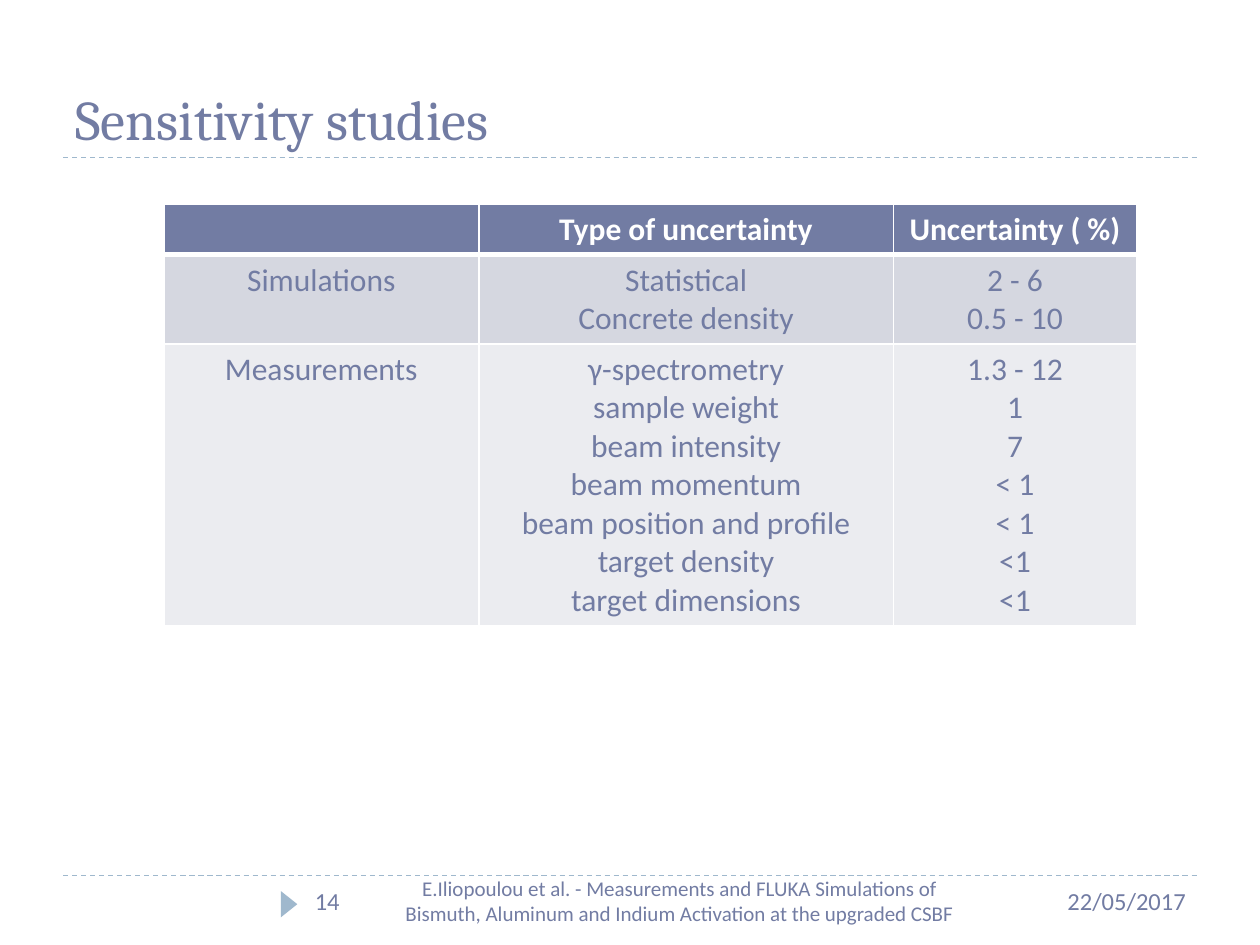
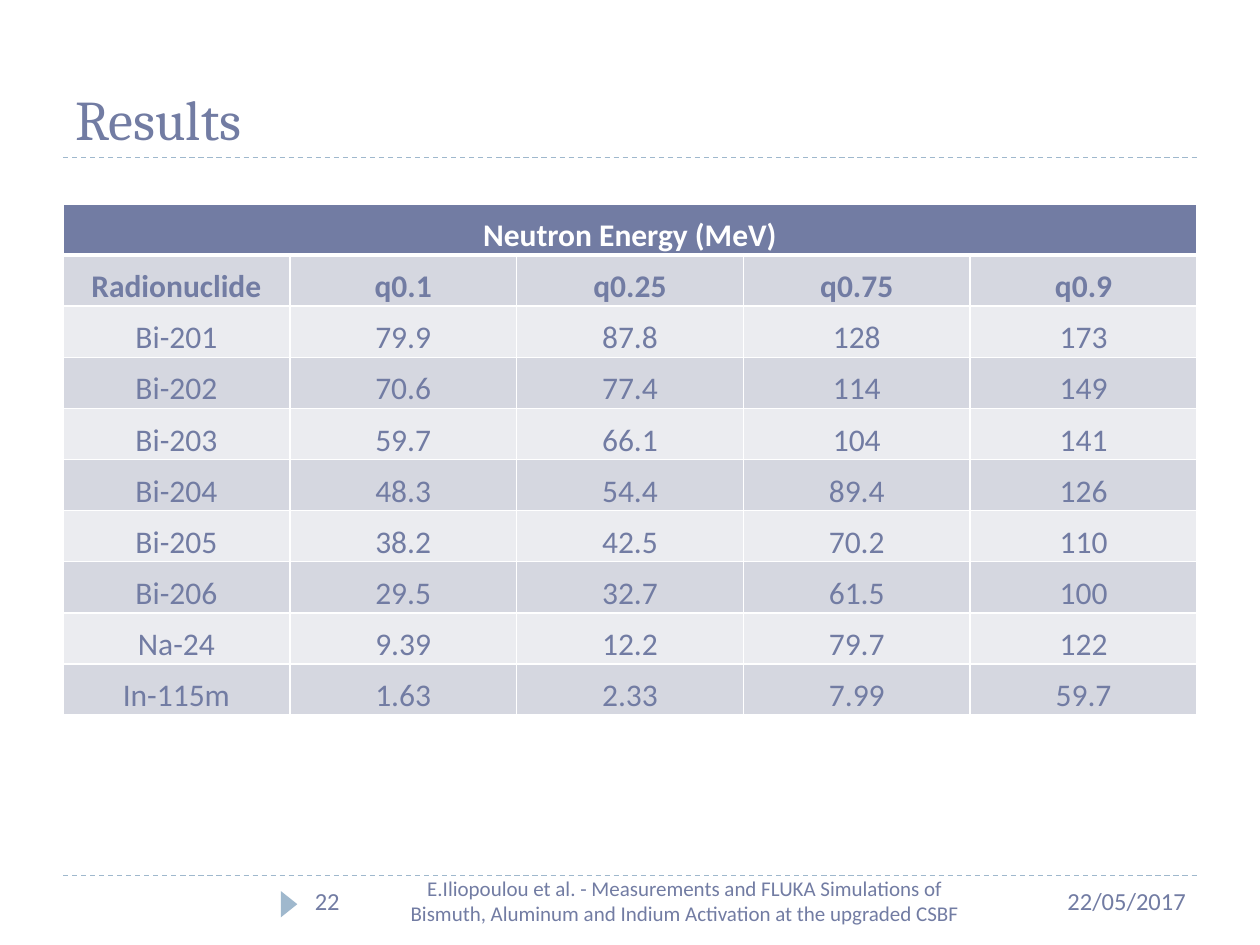
from dataclasses import dataclass

from lxml import etree
from pptx import Presentation
from pptx import util as u
from pptx.dml import color
from pptx.enum import dml, shapes, text
from pptx.oxml import ns

INDIGO, SKY, WHITE = "727CA3", "9FB8CD", "FFFFFF"
BANDS = ("D5D7E0", "EBECF0")
HEADING, BODY = "Cambria", "Calibri"
LEFT, RIGHT, TITLE_RULE, FOOTER_RULE = 36, 684, 90, 500.4
TABLE_TOP = 116.6
DATE = "22/05/2017"
CITATION = (
    "E.Iliopoulou et al. - Measurements and FLUKA Simulations of "
    "Bismuth, Aluminum and Indium Activation at the upgraded CSBF"
)


@dataclass(frozen=True)
class Label:
    """A line of text with its box and style."""
    words: str
    left: float
    top: float
    width: float
    height: float
    size: float
    align: text.PP_ALIGN = text.PP_ALIGN.LEFT
    anchor: text.MSO_ANCHOR = text.MSO_ANCHOR.MIDDLE
    face: str = BODY


@dataclass(frozen=True)
class Grid:
    """A table with its geometry and cell style."""
    rows: tuple[tuple[str, ...], ...]
    left: float
    widths: tuple[float, ...]
    heights: tuple[float, ...]
    anchor: text.MSO_ANCHOR = text.MSO_ANCHOR.TOP
    margins: tuple[float, float, float, float] = (7.2, 3.6, 7.2, 3.6)
    bold_rows: int = 1
    header_spans: bool = False


@dataclass(frozen=True)
class Page:
    """The parts that differ from slide to slide."""
    title: str
    number: int
    citation_width: float
    grid: Grid


UNCERTAINTIES = Grid(
    rows=(
        ("", "Type of uncertainty", "Uncertainty ( %)"),
        ("Simulations", "Statistical\nConcrete density", "2 - 6\n0.5 - 10"),
        (
            "Measurements",
            "γ-spectrometry\nsample weight\nbeam intensity\nbeam momentum\n"
            "beam position and profile\ntarget density\ntarget dimensions",
            "1.3 - 12\n1\n7\n< 1\n< 1\n<1\n<1",
        ),
    ),
    left=93.6,
    widths=(180, 236.9, 139),
    heights=(29, 51, 161),
)

ENERGIES = Grid(
    rows=(
        ("Neutron Energy (MeV)", "", "", "", ""),
        ("Radionuclide", "q0.1", "q0.25", "q0.75", "q0.9"),
        ("Bi-201", "79.9", "87.8", "128", "173"),
        ("Bi-202", "70.6", "77.4", "114", "149"),
        ("Bi-203", "59.7", "66.1", "104", "141"),
        ("Bi-204", "48.3", "54.4", "89.4", "126"),
        ("Bi-205", "38.2", "42.5", "70.2", "110"),
        ("Bi-206", "29.5", "32.7", "61.5", "100"),
        ("Na-24", "9.39", "12.2", "79.7", "122"),
        ("In-115m", "1.63", "2.33", "7.99", "59.7"),
    ),
    left=LEFT,
    widths=((RIGHT - LEFT) / 5,) * 5,
    heights=(29.2,) * 10,
    anchor=text.MSO_ANCHOR.BOTTOM,
    margins=(0.7, 0.7, 0.7, 0),
    bold_rows=2,
    header_spans=True,
)

PAGES = (
    Page("Sensitivity studies", 14, 329, UNCERTAINTIES),
    Page("Results", 22, 334.8, ENERGIES),
)


def rgb(code: str) -> color.RGBColor:
    """Turn a hex string into a colour."""
    return color.RGBColor.from_string(code)


def style_text(frame, size: float, face: str, ink: str, align, bold: bool = False) -> None:
    """Format every paragraph and run of a text frame."""
    for paragraph in frame.paragraphs:
        paragraph.alignment = align
        for run in paragraph.runs:
            run.font.size = u.Pt(size)
            run.font.name = face
            run.font.bold = bold
            run.font.color.rgb = rgb(ink)


def draw_label(slide, label: Label) -> None:
    """Add a label as a wrapped text box."""
    box = slide.shapes.add_textbox(
        u.Pt(label.left), u.Pt(label.top), u.Pt(label.width), u.Pt(label.height)
    )
    frame = box.text_frame
    frame.word_wrap = True
    frame.vertical_anchor = label.anchor
    frame.text = label.words
    style_text(frame, label.size, label.face, INDIGO, label.align)


def draw_rule(slide, height: float) -> None:
    """Add a dashed rule across the slide."""
    rule = slide.shapes.add_connector(
        shapes.MSO_CONNECTOR.STRAIGHT, u.Pt(LEFT), u.Pt(height), u.Pt(RIGHT), u.Pt(height)
    )
    rule.line.color.rgb = rgb(SKY)
    rule.line.width = u.Pt(0.75)
    rule.line.dash_style = dml.MSO_LINE.DASH
    etree.SubElement(rule._element.spPr, ns.qn("a:effectLst"))


def draw_page_marker(slide) -> None:
    """Add the triangle that points at the page number."""
    marker = slide.shapes.add_shape(
        shapes.MSO_SHAPE.ISOSCELES_TRIANGLE, u.Pt(157.7), u.Pt(512), u.Pt(15), u.Pt(9.4)
    )
    marker.rotation = 90
    marker.shadow.inherit = False
    marker.fill.solid()
    marker.fill.fore_color.rgb = rgb(SKY)
    marker.line.fill.background()


def set_borders(cell, top: float, bottom: float) -> None:
    """Give a cell white borders, with its own top and bottom widths."""
    properties = cell._tc.get_or_add_tcPr()
    edges = (("lnL", 1), ("lnR", 1), ("lnT", top), ("lnB", bottom))
    for position, (edge, width) in enumerate(edges):
        line = etree.Element(ns.qn(f"a:{edge}"), w=str(u.Pt(width)))
        fill = etree.SubElement(line, ns.qn("a:solidFill"))
        etree.SubElement(fill, ns.qn("a:srgbClr"), val=WHITE)
        properties.insert(position, line)


def draw_cell(cell, words: str, row: int, grid: Grid) -> None:
    """Fill, border and write one table cell."""
    cell.fill.solid()
    cell.fill.fore_color.rgb = rgb(BANDS[(row - 1) % 2] if row else INDIGO)
    set_borders(cell, top=3 if row == 1 else 1, bottom=1 if row else 3)
    cell.vertical_anchor = grid.anchor
    (cell.margin_left, cell.margin_top,
     cell.margin_right, cell.margin_bottom) = map(u.Pt, grid.margins)
    cell.text_frame.text = words
    style_text(cell.text_frame, 18, BODY, INDIGO if row else WHITE,
               text.PP_ALIGN.CENTER, row < grid.bold_rows)


def draw_grid(slide, grid: Grid) -> None:
    """Add a banded table."""
    table = slide.shapes.add_table(
        len(grid.heights), len(grid.widths), u.Pt(grid.left), u.Pt(TABLE_TOP),
        u.Pt(sum(grid.widths)), u.Pt(sum(grid.heights)),
    ).table
    for column, width in zip(table.columns, grid.widths):
        column.width = u.Pt(width)
    for row, (entries, height) in enumerate(zip(grid.rows, grid.heights)):
        table.rows[row].height = u.Pt(height)
        for column, words in enumerate(entries):
            draw_cell(table.cell(row, column), words, row, grid)
    if grid.header_spans:
        table.cell(0, 0).merge(table.cell(0, len(grid.widths) - 1))


def draw_page(slide, page: Page) -> None:
    """Draw the shared frame and the table of one slide."""
    draw_rule(slide, FOOTER_RULE)
    draw_rule(slide, TITLE_RULE)
    draw_page_marker(slide)
    labels = (
        Label(page.title, LEFT, 12.2, RIGHT - LEFT, 77.8, 32,
              anchor=text.MSO_ANCHOR.BOTTOM, face=HEADING),
        Label(DATE, 553, FOOTER_RULE, 131.8, 28.8, 14, text.PP_ALIGN.RIGHT),
        Label(CITATION, 223.9, FOOTER_RULE, page.citation_width, 28.8, 12,
              text.PP_ALIGN.CENTER),
        Label(str(page.number), 172.8, FOOTER_RULE, 45.4, 28.8, 14),
    )
    for label in labels:
        draw_label(slide, label)
    draw_grid(slide, page.grid)


def main() -> None:
    """Build and save the slides."""
    deck = Presentation()
    deck.slide_width, deck.slide_height = u.Pt(720), u.Pt(540)
    for page in PAGES:
        draw_page(deck.slides.add_slide(deck.slide_layouts[6]), page)
    deck.save("out.pptx")


if __name__ == "__main__":
    main()
